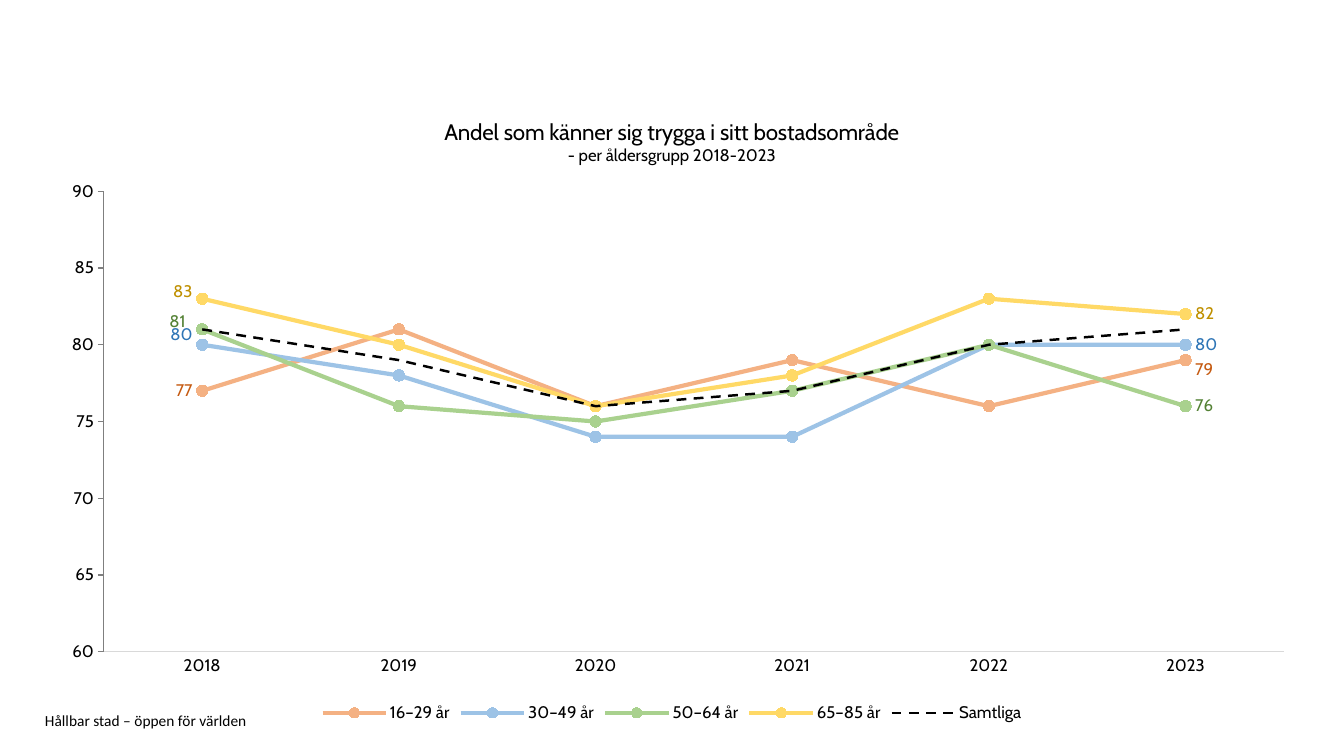
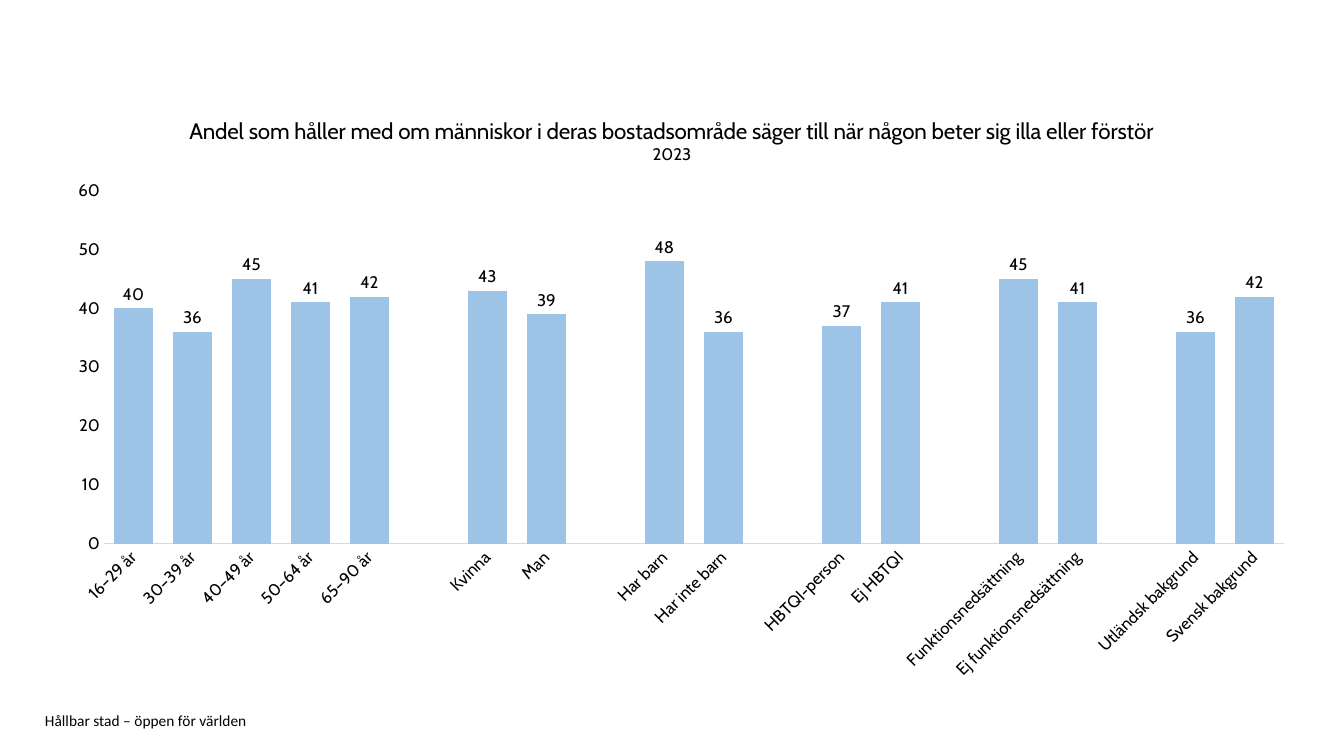
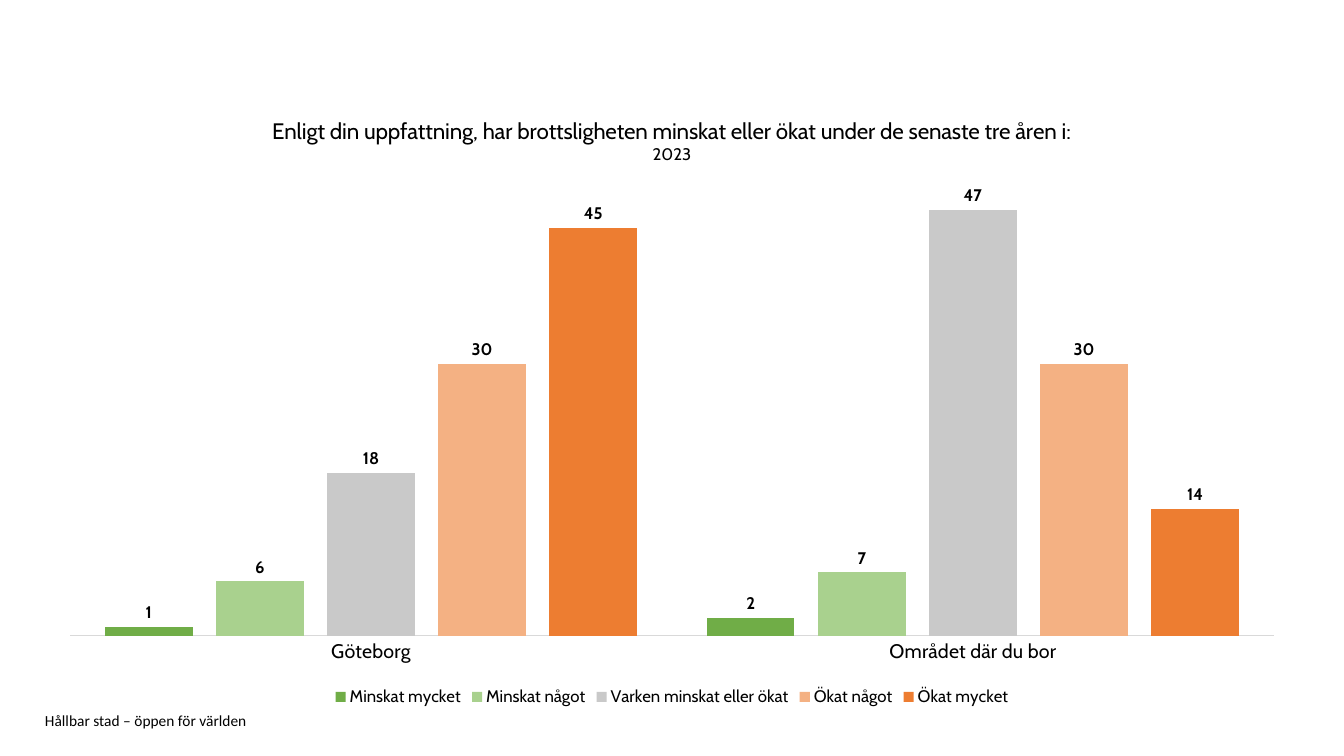
import pptx
import pptx.chart.data
import pptx.dml.color
import pptx.enum.chart
import pptx.enum.dml
import pptx.enum.text
import pptx.oxml
import pptx.oxml.ns
import pptx.util

PX = 914400 / 100.8
THEME = {
    "chart_font": "Cabin", "footer_font": "Calibri",
    "title_size": 16, "group_size": 14, "body_size": 12, "footer_size": 11,
    "text": "000000", "baseline": "D9D9D9", "axis": "7F7F7F",
    "orange": "ED7D31", "light_orange": "F4B183", "dark_orange": "C55A11",
    "green": "70AD47", "light_green": "A9D18E", "dark_green": "548235",
    "blue": "9DC3E6", "dark_blue": "2E75B6",
    "yellow": "FFD966", "dark_yellow": "BF9000", "grey": "C9C9C9",
}
FOOTER = "Hållbar stad – öppen för världen"
CHART_LEFT, CHART_TOP, CHART_WIDTH = 45, 96, 1254
kinds = pptx.enum.chart.XL_CHART_TYPE
sides = pptx.enum.chart.XL_LABEL_POSITION
ticks = pptx.enum.chart.XL_TICK_MARK
rgb = pptx.dml.color.RGBColor.from_string


def set_font(font, size="body_size", color="text", name="chart_font", bold=False):
    """Give a font its size, colour and face by their theme keys."""
    values = {"size": pptx.util.Pt(THEME[size]), "name": THEME[name], "bold": bold}
    for attribute, value in values.items():
        setattr(font, attribute, value)
    font.color.rgb = rgb(THEME[color])


def manual_layout(**values):
    """Build a chart layout element from fractions of the chart's size."""
    tags = "".join(f'<c:{tag} val="{value}"/>' for tag, value in values.items())
    return pptx.oxml.parse_xml(
        f'<c:layout {pptx.oxml.ns.nsdecls("c")}><c:manualLayout>{tags}'
        "</c:manualLayout></c:layout>")


# Line series: name, values, line colour, label colour,
# then the label shift in px at the first and the last point.
age_groups = [
    ("16–29 år", (77, 81, 76, 79, 76, 79), "light_orange", "dark_orange", (0, 0), (0, 10)),
    ("30–49 år", (80, 78, 74, 74, 80, 80), "blue", "dark_blue", (0, -10), (0, 0)),
    ("50–64 år", (81, 76, 75, 77, 80, 76), "light_green", "dark_green", (-7, -8), (0, 0)),
    ("65–85 år", (83, 80, 76, 78, 83, 82), "yellow", "dark_yellow", (0, -7), (0, 0)),
    ("Samtliga", (81, 79, 76, 77, 80, 81), "text", None, None, None),
]
background_groups = [
    [("16–29 år", 40), ("30–39 år", 36), ("40–49 år", 45), ("50–64 år", 41),
     ("65–90 år", 42)],
    [("Kvinna", 43), ("Man", 39)],
    [("Har barn", 48), ("Har inte barn", 36)],
    [("HBTQI-person", 37), ("Ej HBTQI", 41)],
    [("Funktionsnedsättning", 45), ("Ej funktionsnedsättning", 41)],
    [("Utländsk bakgrund", 36), ("Svensk bakgrund", 42)],
]
bars = list(background_groups[0])
for group in background_groups[1:]:
    bars += [("", None), *group]

charts = [
    {"title": "Andel som känner sig trygga i sitt bostadsområde",
     "subtitle": "- per åldersgrupp 2018-2023",
     "kind": kinds.LINE_MARKERS, "height": 631, "legend": True,
     "categories": [str(year) for year in range(2018, 2024)],
     "series": [row[:3] for row in age_groups],
     "plot": (0.047, 0.151, 0.941, 0.73),
     "scale": {"minimum_scale": 60, "maximum_scale": 90, "major_unit": 5}},
    {"title": "Andel som håller med om människor i deras bostadsområde "
              "säger till när någon beter sig illa eller förstör",
     "subtitle": "2023",
     "kind": kinds.COLUMN_CLUSTERED, "height": 615, "legend": False,
     "categories": [label for label, share in bars],
     "series": [("Series 1", [share for label, share in bars], "blue")],
     "plot": (0.047, 0.154, 0.941, 0.574),
     "scale": {"minimum_scale": 0, "maximum_scale": 60, "major_unit": 10},
     "bars": {"gap_width": 50}, "rotation": -45},
    {"title": "Enligt din uppfattning, har brottsligheten minskat eller ökat "
              "under de senaste tre åren i:",
     "subtitle": "2023",
     "kind": kinds.COLUMN_CLUSTERED, "height": 615, "legend": True,
     "categories": ["Göteborg", "Området där du bor"],
     "series": [("Minskat mycket", (1, 2), "green"),
                ("Minskat något", (6, 7), "light_green"),
                ("Varken minskat eller ökat", (18, 47), "grey"),
                ("Ökat något", (30, 30), "light_orange"),
                ("Ökat mycket", (45, 14), "orange")],
     "plot": (0.02, 0.141, 0.96, 0.737),
     "scale": {"minimum_scale": 0, "maximum_scale": 50, "visible": False},
     "bars": {"gap_width": 80, "overlap": -27},
     "category_size": "group_size", "bold_labels": True},
]

deck = pptx.Presentation()
deck.slide_width, deck.slide_height = round(1344 * PX), round(756 * PX)

for item in charts:
    page = deck.slides.add_slide(deck.slide_layouts[6])

    box = page.shapes.add_textbox(*(round(n * PX) for n in (45, 712, 953, 16)))
    frame = box.text_frame
    for side in ("left", "top", "right", "bottom"):
        setattr(frame, f"margin_{side}", 0)
    frame.word_wrap = True
    frame.vertical_anchor = pptx.enum.text.MSO_ANCHOR.MIDDLE
    span = frame.paragraphs[0].add_run()
    span.text = FOOTER
    set_font(span.font, "footer_size", name="footer_font")

    data = pptx.chart.data.CategoryChartData()
    data.categories = item["categories"]
    for name, values, color in item["series"]:
        data.add_series(name, values)
    place = (CHART_LEFT, CHART_TOP, CHART_WIDTH, item["height"])
    chart = page.shapes.add_chart(
        item["kind"], *(round(n * PX) for n in place), data).chart
    set_font(chart.font)

    heading = chart.chart_title.text_frame
    for para, text, size in (
            (heading.paragraphs[0], item["title"], "title_size"),
            (heading.add_paragraph(), item["subtitle"], "body_size")):
        span = para.add_run()
        span.text = text
        set_font(span.font, size)
    chart.chart_title.include_in_layout = False

    chart.has_legend = item["legend"]
    if item["legend"]:
        chart.legend.position = pptx.enum.chart.XL_LEGEND_POSITION.BOTTOM
        chart.legend.include_in_layout = False
        set_font(chart.legend.font)

    plot_area = chart.plots[0]._element.getparent()
    for old_layout in plot_area.xpath("./c:layout"):
        plot_area.remove(old_layout)
    left, top, width, height = item["plot"]
    plot_area.insert(0, manual_layout(
        layoutTarget="inner", xMode="edge", yMode="edge",
        x=left, y=top, w=width, h=height))

    category_axis, value_axis = chart.category_axis, chart.value_axis
    category_axis.major_tick_mark = ticks.NONE
    category_axis.format.line.color.rgb = rgb(THEME["baseline"])
    category_axis.format.line.width = pptx.util.Pt(0.75)
    set_font(category_axis.tick_labels.font, item.get("category_size", "body_size"))
    if "rotation" in item:
        text_body = category_axis._element.xpath("./c:txPr/a:bodyPr")[0]
        text_body.set("rot", str(item["rotation"] * 60000))
    value_axis.has_major_gridlines = False
    for attribute, value in item["scale"].items():
        setattr(value_axis, attribute, value)
    set_font(value_axis.tick_labels.font)

    plot = chart.plots[0]
    plot.vary_by_categories = False
    if item["kind"] == kinds.COLUMN_CLUSTERED:
        value_axis.major_tick_mark = ticks.NONE
        value_axis.format.line.fill.background()
        for attribute, value in item["bars"].items():
            setattr(plot, attribute, value)
        for series, (name, values, color) in zip(plot.series, item["series"]):
            series.format.fill.solid()
            series.format.fill.fore_color.rgb = rgb(THEME[color])
            labels = series.data_labels
            labels.show_value = True
            labels.position = sides.OUTSIDE_END
            set_font(labels.font, bold=item.get("bold_labels", False))
        continue

    value_axis.major_tick_mark = ticks.OUTSIDE
    value_axis.format.line.color.rgb = rgb(THEME["axis"])
    value_axis.format.line.width = pptx.util.Pt(0.75)
    for series, row in zip(plot.series, age_groups):
        name, values, color, label_color, first_shift, last_shift = row
        series.smooth = False
        line = series.format.line
        line.color.rgb = rgb(THEME[color])
        if label_color is None:
            line.width = pptx.util.Pt(1.75)
            line.dash_style = pptx.enum.dml.MSO_LINE.DASH
            series.marker.style = pptx.enum.chart.XL_MARKER_STYLE.NONE
            continue
        line.width = pptx.util.Pt(3)
        marker = series.marker
        marker.style = pptx.enum.chart.XL_MARKER_STYLE.CIRCLE
        marker.size = 8
        marker.format.fill.solid()
        marker.format.fill.fore_color.rgb = rgb(THEME[color])
        marker.format.line.color.rgb = rgb(THEME[color])
        series.data_labels.show_value = False
        for index, side, (across, down) in (
                (0, sides.LEFT, first_shift),
                (len(values) - 1, sides.RIGHT, last_shift)):
            label = series.points[index].data_label
            set_font(label.font, color=label_color)
            label.position = side
            if across or down:
                position = series._element.xpath(
                    f'./c:dLbls/c:dLbl/c:idx[@val="{index}"]')[0]
                position.addnext(manual_layout(
                    x=round(across / CHART_WIDTH, 4),
                    y=round(down / item["height"], 4)))

deck.save("out.pptx")
